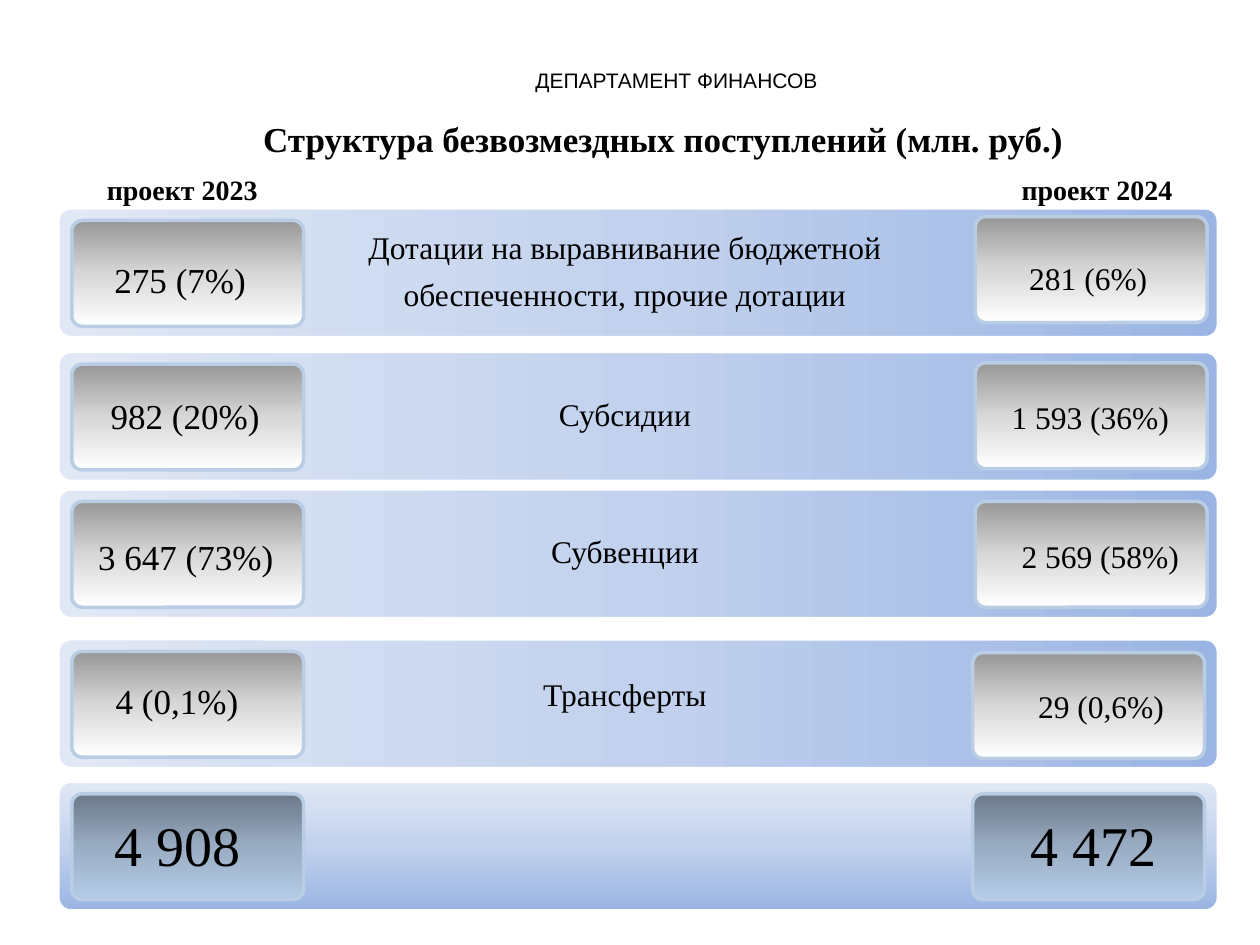
from copy import deepcopy

from pptx import Presentation
from pptx.dml.color import RGBColor
from pptx.enum.shapes import MSO_SHAPE
from pptx.enum.text import MSO_ANCHOR, MSO_AUTO_SIZE, PP_ALIGN
from pptx.oxml.ns import qn
from pptx.util import Inches, Pt

BLACK = RGBColor(0x00, 0x00, 0x00)
WHITE = RGBColor(0xFF, 0xFF, 0xFF)
CARD_EDGE = RGBColor(0xB9, 0xCD, 0xE5)
BAND_BLUES = [RGBColor(0x9A, 0xB5, 0xE4), RGBColor(0xC2, 0xD1, 0xED), RGBColor(0xE1, 0xE8, 0xF5)]
CARD_GREYS = [RGBColor(0x97, 0x97, 0x97), RGBColor(0xD7, 0xD7, 0xD7), RGBColor(0xFF, 0xFF, 0xFF)]
TOTAL_BLUES = [RGBColor(0x6B, 0x79, 0x89), RGBColor(0x99, 0xAC, 0xC3), RGBColor(0xB5, 0xCC, 0xE8)]
SERIF = "Times New Roman"

BAND_LEFT, BAND_WIDTH, BAND_HEIGHT = 0.46, 9.21, 1.03
CARD_WIDTH, CARD_HEIGHT = 1.84, 0.84

prs = Presentation()
prs.slide_width, prs.slide_height = Inches(10), Inches(7.5)
slide = prs.slides.add_slide(prs.slide_layouts[6])


def add_panel(left, top, width, height, colors, angle, edge):
    """Rounded panel with a three-stop gradient; angle runs counter-clockwise."""
    panel = slide.shapes.add_shape(
        MSO_SHAPE.ROUNDED_RECTANGLE, Inches(left), Inches(top), Inches(width), Inches(height))
    panel.adjustments[0] = 0.1
    panel.shadow.inherit = False
    panel.fill.gradient()
    panel.fill.gradient_angle = angle
    stop_list = panel._element.spPr.find(qn("a:gradFill")).find(qn("a:gsLst"))
    stop_list.append(deepcopy(stop_list[-1]))
    for stop, position, color in zip(panel.fill.gradient_stops, (0, 0.5, 1), colors):
        stop.position = position
        stop.color.rgb = color
    panel.line.color.rgb = edge
    panel.line.width = Pt(2)


def add_text(text, left, top, width, height, size, font=SERIF, bold=False, wrap=False, align=PP_ALIGN.LEFT):
    box = slide.shapes.add_textbox(Inches(left), Inches(top), Inches(width), Inches(height))
    frame = box.text_frame
    frame.word_wrap = wrap
    frame.auto_size = MSO_AUTO_SIZE.SHAPE_TO_FIT_TEXT
    frame.text = text
    for paragraph in frame.paragraphs:
        paragraph.alignment = align
        for run in paragraph.runs:
            run.font.name = font
            run.font.size = Pt(size)
            run.font.bold = bold
            run.font.color.rgb = BLACK
    return frame


add_text("ДЕПАРТАМЕНТ ФИНАНСОВ", 0.88, 0.49, 8.98, 0.3, 12, font="Arial", wrap=True, align=PP_ALIGN.CENTER)
add_text("Структура безвозмездных поступлений (млн. руб.)", 1.99, 0.88, 7.8, 0.44, 20, bold=True, wrap=True)
for year, left in (("проект 2023", 0.75), ("проект 2024", 8.01)):
    add_text(year, left, 1.32, 1.41, 0.37, 16, bold=True)

# band top, category, offset of its label, 2024 card (left, top),
# then value, left, top and width of the text for 2023 and for 2024
rows = [
    (1.65, "Дотации на выравнивание бюджетной\nобеспеченности, прочие дотации", 0, (7.74, 1.72),
     ("275 (7%)", 0.81, 2.0, 1.25), ("281 (6%)", 8.07, 2.01, 1.15)),
    (2.79, "Субсидии", 0, (7.74, 2.88),
     ("982 (20%)", 0.78, 3.08, 1.39), ("1 593 (36%)", 7.93, 3.11, 1.46)),
    (3.88, "Субвенции", 0, (7.74, 3.98),
     ("3 647 (73%)", 0.68, 4.2, 1.6), ("2 569 (58%)", 8.01, 4.21, 1.46)),
    (5.07, "Трансферты", -0.06, (7.72, 5.18),
     ("4 (0,1%)", 0.82, 5.34, 1.18), ("29 (0,6%)", 8.14, 5.4, 1.21)),
]
for band_top, category, label_shift, card_2024, value_2023, value_2024 in rows:
    add_panel(BAND_LEFT, band_top, BAND_WIDTH, BAND_HEIGHT, BAND_BLUES, 180, WHITE)
    for left, top in ((0.57, band_top + 0.1), card_2024):
        add_panel(left, top, CARD_WIDTH, CARD_HEIGHT, CARD_GREYS, 270, CARD_EDGE)

    label = add_text(category, 2.41, band_top + label_shift, 5.1, BAND_HEIGHT, 18,
                     wrap=True, align=PP_ALIGN.CENTER)
    label.auto_size = MSO_AUTO_SIZE.NONE
    label.vertical_anchor = MSO_ANCHOR.MIDDLE
    for line in label.paragraphs:
        line.line_spacing = 0.9
    for line in label.paragraphs[:-1]:
        line.space_after = Pt(7)

    for (value, left, top, width), size, height in ((value_2023, 20, 0.44), (value_2024, 18, 0.4)):
        add_text(value, left, top, width, height, size)

add_panel(BAND_LEFT, 6.2, BAND_WIDTH, BAND_HEIGHT, BAND_BLUES, 90, WHITE)
for total, card_left, text_left in (("4 908", 0.57, 0.81), ("4 472", 7.72, 8.08)):
    add_panel(card_left, 6.3, CARD_WIDTH, CARD_HEIGHT, TOTAL_BLUES, 270, CARD_EDGE)
    add_text(total, text_left, 6.38, 1.21, 0.64, 32)

prs.save("out.pptx")
